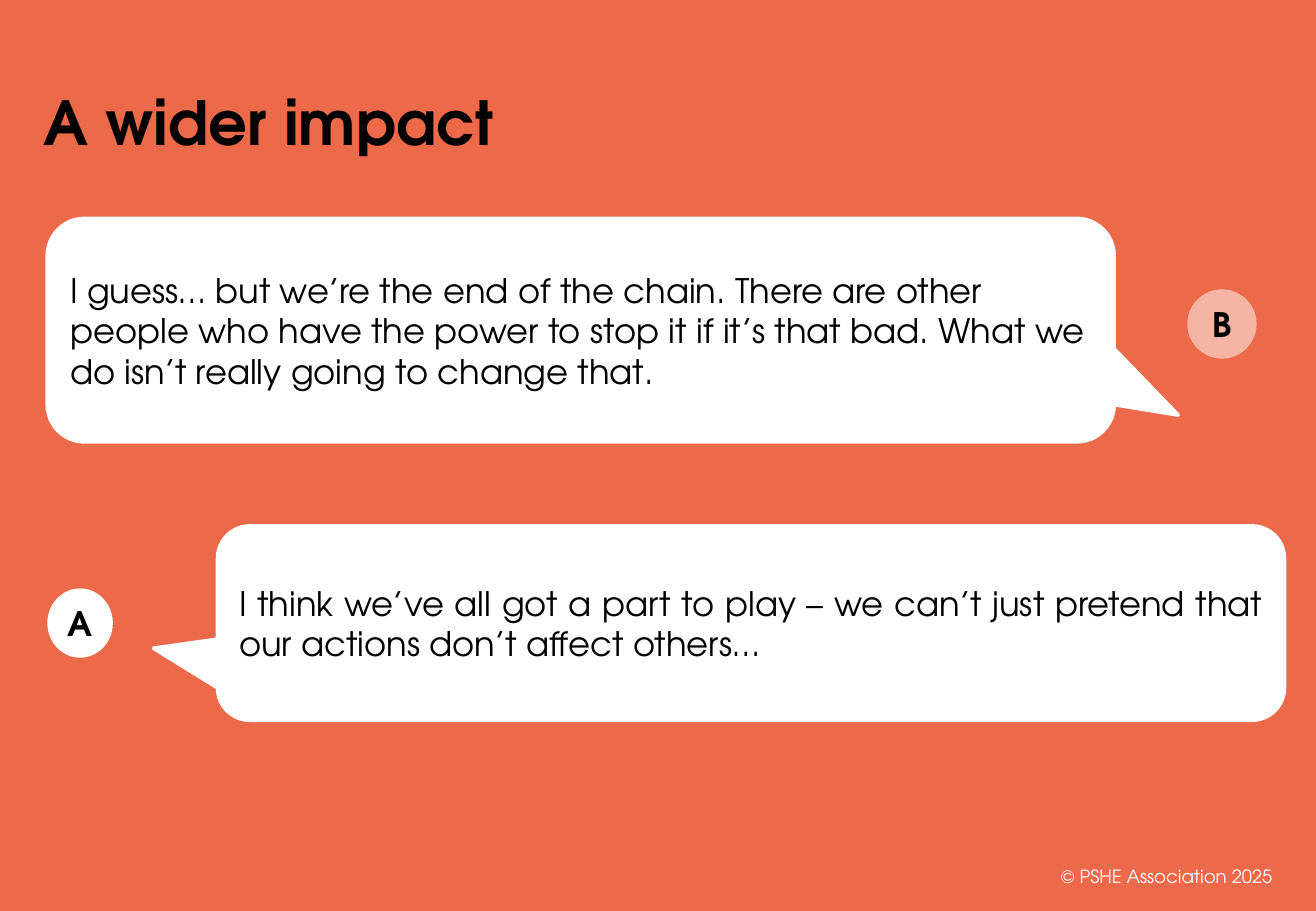
from dataclasses import dataclass

import pptx
import pptx.dml.color
import pptx.enum.shapes
import pptx.enum.text
import pptx.util

Cm = pptx.util.Cm
Pt = pptx.util.Pt
Shape = pptx.enum.shapes.MSO_SHAPE
Align = pptx.enum.text.PP_ALIGN
Anchor = pptx.enum.text.MSO_ANCHOR


@dataclass(frozen=True)
class Theme:
    font: str = "TeX Gyre Adventor"
    background: str = "EC694A"
    ink: str = "000000"
    white: str = "FFFFFF"
    pale: str = "F6B4A5"
    title_size: float = 36
    title_line: float = 43
    speech_size: float = 20
    footer_size: float = 10.8


@dataclass(frozen=True)
class Box:
    """A region of the slide, in centimetres."""
    left: float
    top: float
    width: float
    height: float

    def lengths(self):
        return Cm(self.left), Cm(self.top), Cm(self.width), Cm(self.height)


THEME = Theme()
BUBBLE_WIDTH = 22.3
BADGE_HEIGHT = 1.45


def rgb(value):
    return pptx.dml.color.RGBColor.from_string(value)


def write(shape, text, size, color=THEME.ink, bold=False,
          align=Align.LEFT, anchor=Anchor.MIDDLE):
    frame = shape.text_frame
    frame.text = text
    frame.word_wrap = True
    frame.vertical_anchor = anchor
    paragraph = frame.paragraphs[0]
    paragraph.alignment = align
    font = paragraph.runs[0].font
    font.name, font.size, font.bold = THEME.font, Pt(size), bold
    font.color.rgb = rgb(color)
    return paragraph


def add_filled(slide, preset, box, fill):
    shape = slide.shapes.add_shape(preset, *box.lengths())
    shape.shadow.inherit = False
    shape.fill.solid()
    shape.fill.fore_color.rgb = rgb(fill)
    shape.line.fill.background()
    return shape


def add_title(slide, box, text):
    title = slide.shapes.add_textbox(*box.lengths())
    heading = write(title, text, THEME.title_size, bold=True, anchor=Anchor.BOTTOM)
    heading.line_spacing = Pt(THEME.title_line)


def add_footer(slide, box, text):
    footer = slide.shapes.add_textbox(*box.lengths())
    write(footer, text, THEME.footer_size, THEME.white, align=Align.RIGHT)


def add_bubble(slide, box, text, tail, align):
    bubble = add_filled(slide, Shape.ROUNDED_RECTANGULAR_CALLOUT, box, THEME.white)
    bubble.line.color.rgb = rgb(THEME.white)
    bubble.line.width = Pt(2.25)
    bubble.adjustments[0], bubble.adjustments[1] = tail
    write(bubble, text, THEME.speech_size, align=align)


def add_badge(slide, box, letter, fill):
    badge = add_filled(slide, Shape.OVAL, box, fill)
    frame = badge.text_frame
    frame.margin_left = frame.margin_right = 0
    write(badge, letter, THEME.speech_size, bold=True, align=Align.CENTER)


def add_turn(slide, box, speaker, text, tail, badge_fill, badge_width,
             badge_rise=0, align=Align.LEFT):
    """Place a speech bubble, and the speaker's badge on the side of its tail."""
    bubble_left = badge_left = box.left
    if tail[0] > 0:
        badge_left += box.width - badge_width
    else:
        bubble_left += box.width - BUBBLE_WIDTH
    badge_top = box.top + (box.height - BADGE_HEIGHT) / 2 - badge_rise
    add_bubble(slide, Box(bubble_left, box.top, BUBBLE_WIDTH, box.height),
               text, tail, align)
    add_badge(slide, Box(badge_left, badge_top, badge_width, BADGE_HEIGHT),
              speaker, badge_fill)


def main():
    deck = pptx.Presentation()
    deck.slide_width, deck.slide_height = Cm(27.51), Cm(19.05)
    slide = deck.slides.add_slide(deck.slide_layouts[6])
    slide.background.fill.solid()
    slide.background.fill.fore_color.rgb = rgb(THEME.background)

    add_title(slide, Box(0.66, 1.5, 13.56, 1.93), "A wider impact")
    add_turn(slide, Box(0.99, 4.57, 25.28, 4.67), "B",
             "I guess… but we’re the end of the chain. There are other people "
             "who have the power to stop it if it’s that bad. What we do isn’t "
             "really going to change that.",
             tail=(0.56, 0.38), badge_fill=THEME.pale, badge_width=1.45,
             badge_rise=0.13)
    add_turn(slide, Box(0.99, 11, 25.86, 4.06), "A",
             "I think we’ve all got a part to play – we can’t just pretend "
             "that our actions don’t affect others…",
             tail=(-0.56, 0.13), badge_fill=THEME.white, badge_width=1.37,
             align=Align.JUSTIFY)
    add_footer(slide, Box(20.65, 17.81, 6.2, 1.02), "© PSHE Association 2025")
    deck.save("out.pptx")


if __name__ == "__main__":
    main()
